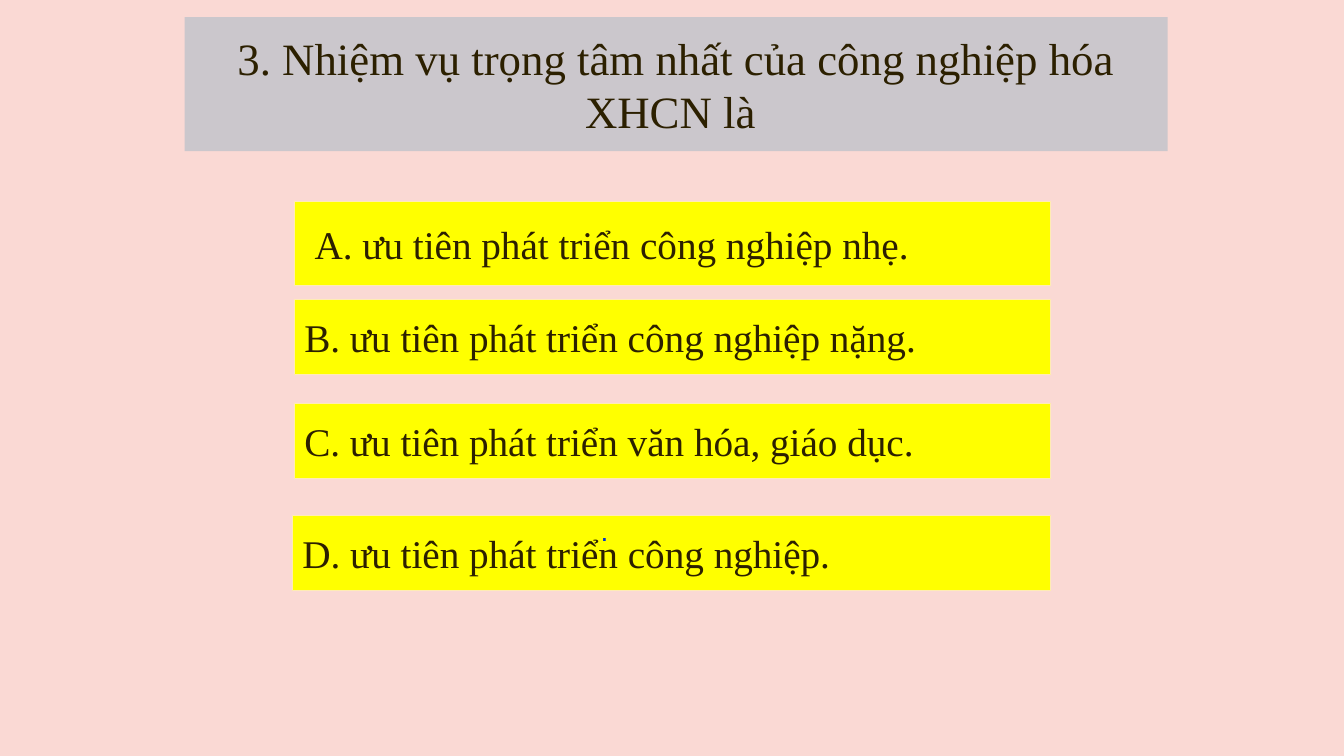
import pptx
import pptx.util
import pptx.dml.color
import pptx.enum.shapes
import pptx.enum.text

Inches = pptx.util.Inches
ALIGN = pptx.enum.text.PP_ALIGN
ANCHOR = pptx.enum.text.MSO_ANCHOR

COLORS = {
    "background": "FAD9D4",
    "question": "CBC7CC",
    "answer": "FFFF00",
    "border": "FFECB4",
    "text": "2C2000",
    "dot": "0033CC",
}


class QuizSlide:
    font = "Times New Roman"

    def __init__(self, deck):
        self.slide = deck.slides.add_slide(deck.slide_layouts[5])
        self.paint(self.slide.background.fill, "background")

    def paint(self, fill, color):
        fill.solid()
        fill.fore_color.rgb = self.rgb(color)

    def rgb(self, color):
        return pptx.dml.color.RGBColor.from_string(COLORS[color])

    def set_text(self, shape, wording, size, color="text", font=None,
                 align=ALIGN.LEFT, anchor=ANCHOR.MIDDLE, wrap=False):
        frame = shape.text_frame
        frame.auto_size = pptx.enum.text.MSO_AUTO_SIZE.NONE
        frame.word_wrap = wrap
        frame.vertical_anchor = anchor
        paragraph = frame.paragraphs[0]
        paragraph.alignment = align
        run = paragraph.add_run()
        run.text = wording
        run.font.name = font or self.font
        run.font.size = pptx.util.Pt(size)
        run.font.color.rgb = self.rgb(color)

    def question(self, wording, left, top, width, height):
        title = self.slide.shapes.title
        title.left, title.top = Inches(left), Inches(top)
        title.width, title.height = Inches(width), Inches(height)
        self.paint(title.fill, "question")
        self.set_text(title, wording, 32, align=ALIGN.CENTER, wrap=True)

    def answer(self, wording, left, top, width, height, inset):
        box = self.slide.shapes.add_shape(
            pptx.enum.shapes.MSO_SHAPE.RECTANGLE,
            Inches(left), Inches(top), Inches(width), Inches(height))
        box.shadow.inherit = False
        self.paint(box.fill, "answer")
        box.line.color.rgb = self.rgb("border")
        box.line.width = pptx.util.Pt(0.75)
        box.text_frame.margin_left = Inches(inset)
        self.set_text(box, wording, 28)

    def label(self, wording, left, top, width, height):
        box = self.slide.shapes.add_textbox(
            Inches(left), Inches(top), Inches(width), Inches(height))
        self.set_text(box, wording, 20, "dot", "Arial", anchor=ANCHOR.TOP)


def main():
    deck = pptx.Presentation()
    deck.slide_width, deck.slide_height = Inches(13.33), Inches(7.5)
    quiz = QuizSlide(deck)
    quiz.question("3. Nhiệm vụ trọng tâm nhất của công nghiệp hóa XHCN là ",
                  1.83, 0.17, 9.75, 1.33)
    answers = [
        ("A. ưu tiên phát triển công nghiệp nhẹ.", 2.92, 2, 0.83, 0.2),
        ("B. ưu tiên phát triển công nghiệp nặng.", 2.92, 2.97, 0.75, 0.1),
        ("C. ưu tiên phát triển văn hóa, giáo dục.", 2.92, 4, 0.75, 0.1),
        ("D. ưu tiên phát triển công nghiệp.", 2.9, 5.11, 0.75, 0.1),
    ]
    right_edge = 10.42
    for wording, left, top, height, inset in answers:
        quiz.answer(wording, left, top, right_edge - left, height, inset)
    quiz.label(".", 5.86, 5.05, 0.28, 0.44)
    deck.save("out.pptx")


if __name__ == "__main__":
    main()
